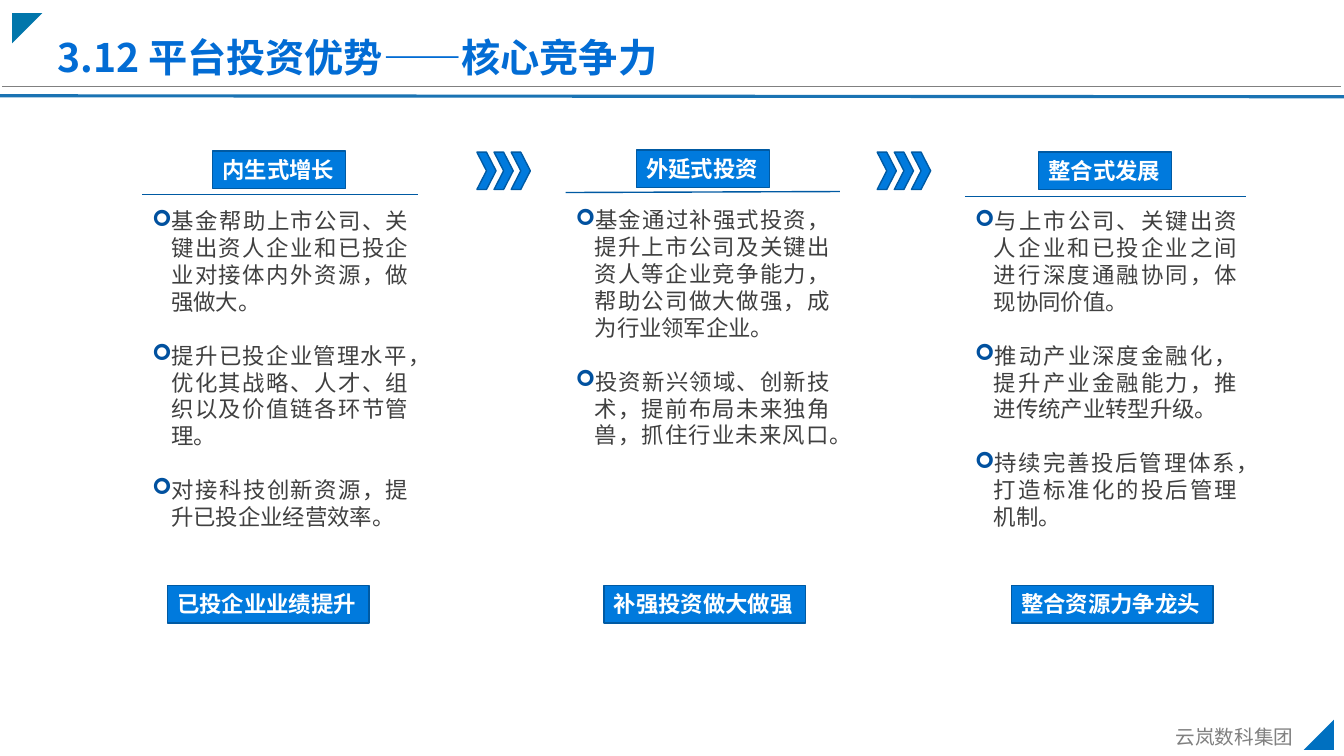
from dataclasses import dataclass

from lxml import etree
from pptx import Presentation
from pptx.dml.color import RGBColor
from pptx.enum.shapes import MSO_CONNECTOR, MSO_SHAPE
from pptx.enum.text import MSO_ANCHOR, PP_ALIGN
from pptx.oxml.ns import qn
from pptx.util import Inches, Pt

STRAIGHT = MSO_CONNECTOR.STRAIGHT
RECTANGLE = MSO_SHAPE.RECTANGLE
CHEVRON = MSO_SHAPE.CHEVRON
TRIANGLE = MSO_SHAPE.RIGHT_TRIANGLE
TOP = MSO_ANCHOR.TOP
LEFT = PP_ALIGN.LEFT
JUSTIFY = PP_ALIGN.JUSTIFY


@dataclass(frozen=True)
class Theme:
    font: str = "Noto Sans CJK SC"
    title: str = "026CD4"
    fill: str = "007ADD"
    edge: str = "005AA3"
    bullet: str = "01519F"
    body: str = "404040"
    gray: str = "808080"
    white: str = "FFFFFF"
    header_line: str = "1A73B3"
    top_corner: str = "0176AB"
    bottom_corner: str = "0070C0"
    title_size: float = 28
    body_size: float = 16
    footer_size: float = 14
    paragraph_gap: float = 19.2


THEME = Theme()

COLUMNS = [
    {
        "heading": ("内生式增长", 2.11, 1.5),
        "rule": (1.41, 1.93, 4.15, 1.93),
        "body": (1.41, 2.01, 2.74, 3.33),
        "points": [
            "基金帮助上市公司、关键出资人企业和已投企业对接体内外资源，做强做大。",
            "提升已投企业管理水平，优化其战略、人才、组织以及价值链各环节管理。",
            "对接科技创新资源，提升已投企业经营效率。",
        ],
        "outcome": ("已投企业业绩提升", 1.66),
    },
    {
        "heading": ("外延式投资", 6.31, 1.49),
        "rule": (5.61, 1.91, 8.33, 1.9),
        "body": (5.61, 2, 2.72, 2.52),
        "points": [
            "基金通过补强式投资，提升上市公司及关键出资人等企业竞争能力，帮助公司做大做强，成为行业领军企业。",
            "投资新兴领域、创新技术，提前布局未来独角兽，抓住行业未来风口。",
        ],
        "outcome": ("补强投资做大做强", 5.99),
    },
    {
        "heading": ("整合式发展", 10.3, 1.51),
        "rule": (9.57, 1.95, 12.36, 1.95),
        "body": (9.57, 2.01, 2.8, 3.33),
        "points": [
            "与上市公司、关键出资人企业和已投企业之间进行深度通融协同，体现协同价值。",
            "推动产业深度金融化，提升产业金融能力，推进传统产业转型升级。",
            "持续完善投后管理体系，打造标准化的投后管理机制。",
        ],
        "outcome": ("整合资源力争龙头", 10.03),
    },
]


def add_line(slide, ends, color, width=1):
    connector = slide.shapes.add_connector(STRAIGHT, *map(Inches, ends))
    connector.line.color.rgb = RGBColor.from_string(color)
    connector.line.width = Pt(width)
    etree.SubElement(connector._element.spPr, qn("a:effectLst"))


def add_block(slide, kind, box, fill, edge=None, rotation=0):
    shape = slide.shapes.add_shape(kind, *map(Inches, box))
    shape.shadow.inherit = False
    shape.rotation = rotation
    shape.fill.solid()
    shape.fill.fore_color.rgb = RGBColor.from_string(fill)
    if edge:
        shape.line.color.rgb = RGBColor.from_string(edge)
        shape.line.width = Pt(1)
    else:
        shape.line.fill.background()
    return shape


def add_run(paragraph, text, size, color, bold=False):
    run = paragraph.add_run()
    run.text = text
    run.font.size = Pt(size)
    run.font.bold = bold
    run.font.name = THEME.font
    run.font.color.rgb = RGBColor.from_string(color)
    east_asian = etree.SubElement(run._r.get_or_add_rPr(), qn("a:ea"))
    east_asian.set("typeface", THEME.font)


def add_text(slide, box, text, size, color, bold=False, wrap=True):
    frame = slide.shapes.add_textbox(*map(Inches, box)).text_frame
    frame.word_wrap = wrap
    add_run(frame.paragraphs[0], text, size, color, bold)


def add_label(slide, box, text):
    shape = add_block(slide, RECTANGLE, box, THEME.fill, THEME.edge)
    frame = shape.text_frame
    frame.word_wrap = False
    frame.vertical_anchor = TOP
    paragraph = frame.paragraphs[0]
    paragraph.alignment = LEFT
    add_run(paragraph, text, THEME.body_size, THEME.white, True)


def set_bullet(paragraph):
    properties = paragraph._p.get_or_add_pPr()
    properties.set("marL", str(Inches(0.19)))
    properties.set("indent", str(Inches(-0.19)))
    bullet_color = etree.SubElement(properties, qn("a:buClr"))
    etree.SubElement(bullet_color, qn("a:srgbClr")).set("val", THEME.bullet)
    etree.SubElement(properties, qn("a:buFont")).set("typeface", "Wingdings")
    etree.SubElement(properties, qn("a:buChar")).set("char", "➢")


def add_points(slide, box, points):
    frame = slide.shapes.add_textbox(*map(Inches, box)).text_frame
    frame.word_wrap = True
    for index, point in enumerate(points):
        paragraph = frame.add_paragraph() if index else frame.paragraphs[0]
        set_bullet(paragraph)
        paragraph.alignment = JUSTIFY
        if index:
            paragraph.space_before = Pt(THEME.paragraph_gap)
        add_run(paragraph, point, THEME.body_size, THEME.body)


def add_column(slide, column):
    heading, left, top = column["heading"]
    add_line(slide, column["rule"], THEME.edge)
    add_label(slide, (left, top, 1.32, 0.37), heading)
    add_points(slide, column["body"], column["points"])
    outcome, left = column["outcome"]
    add_label(slide, (left, 5.81, 2, 0.37), outcome)


def add_chevrons(slide, left):
    for index in range(3):
        box = (left + 0.17 * index, 1.51, 0.19, 0.37)
        add_block(slide, CHEVRON, box, THEME.fill, THEME.edge)


def add_frame(slide):
    add_line(slide, (0, 0.95, 13.33, 0.96), THEME.header_line, 2.25)
    add_block(slide, TRIANGLE, (0.12, 0.13, 0.3, 0.3), THEME.top_corner, rotation=90)
    add_block(slide, TRIANGLE, (12.93, 7.14, 0.3, 0.3), THEME.bottom_corner, rotation=270)
    add_line(slide, (0.02, 0.86, 13.3, 0.86), THEME.gray)
    add_text(slide, (11.56, 7.14, 1.38, 0.34), "云岚数科集团",
             THEME.footer_size, THEME.gray, wrap=False)
    add_text(slide, (0.47, 0.28, 8.21, 0.57), "3.12 平台投资优势——核心竞争力",
             THEME.title_size, THEME.title, bold=True)


def main():
    presentation = Presentation()
    presentation.slide_width = Inches(13.33)
    presentation.slide_height = Inches(7.5)
    slide = presentation.slides.add_slide(presentation.slide_layouts[6])
    add_frame(slide)
    for column in COLUMNS:
        add_column(slide, column)
    for left in (4.73, 8.7):
        add_chevrons(slide, left)
    presentation.save("out.pptx")


if __name__ == "__main__":
    main()
